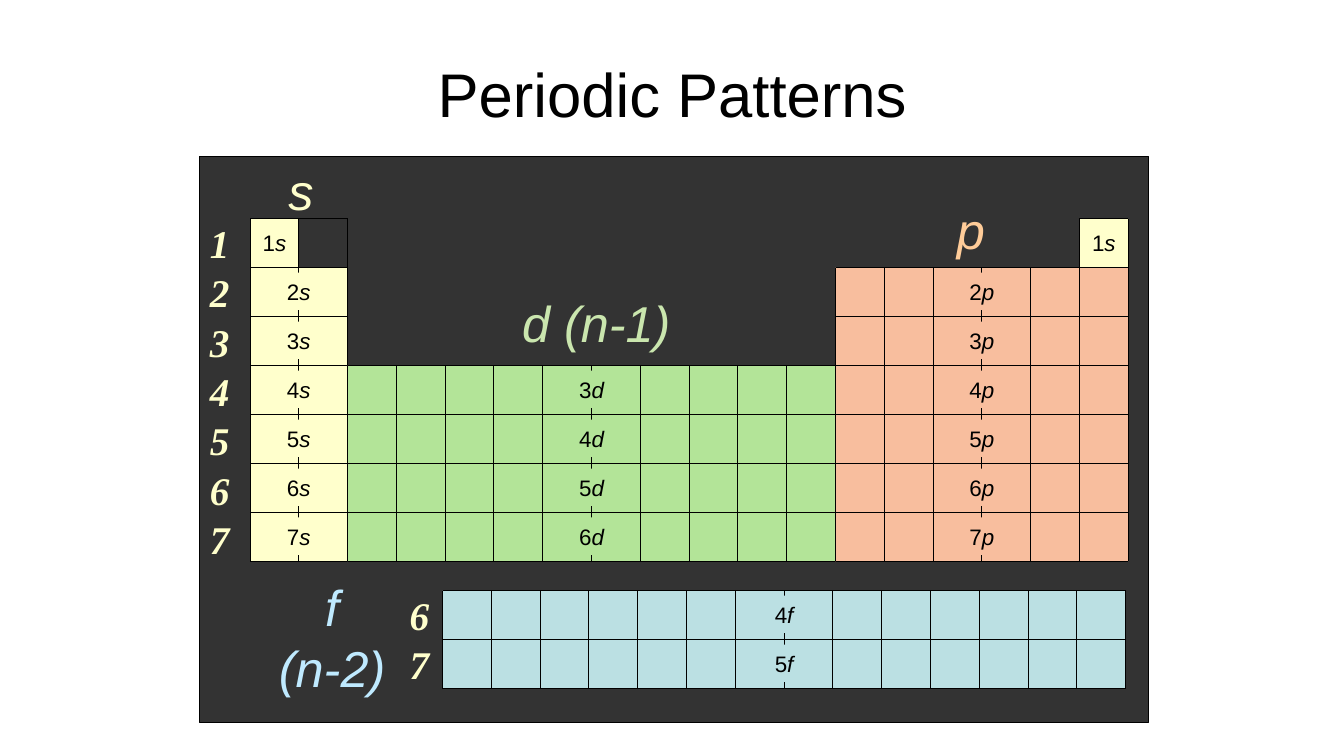
"""Build a slide of the periodic table's s, p, d and f orbital blocks."""
from lxml import etree
from pptx import Presentation
from pptx.dml.color import RGBColor
from pptx.enum.shapes import MSO_CONNECTOR, MSO_SHAPE
from pptx.enum.text import MSO_ANCHOR, PP_ALIGN
from pptx.oxml.ns import qn
from pptx.util import Inches, Pt

RECTANGLE = MSO_SHAPE.RECTANGLE
STRAIGHT = MSO_CONNECTOR.STRAIGHT
CENTER = PP_ALIGN.CENTER
MIDDLE = MSO_ANCHOR.MIDDLE
COLORS = {
    "black": "000000", "board": "333333",
    "s": "FFFFCC", "p": "F8BE9E", "d": "B3E498", "f": "BBE0E3",
    "p title": "FFCC99", "d title": "CAE6AE", "f title": "BFEAFF",
}
LEFT, TOP = 2.48, 2.17
COLUMN, ROW = 8.71 / 18, 3.4 / 7
F_LEFT, F_TOP = 4.39, 5.86
LABEL_WIDTH, LABEL_HEIGHT = 0.44, 0.37

presentation = Presentation()
presentation.slide_width = Inches(13.33)
presentation.slide_height = Inches(7.5)
slide = presentation.slides.add_slide(presentation.slide_layouts[6])


def add_box(bounds, lines=(), fill=None, color="black", size=16, spacing=1.0, **font):
    """Add a filled rectangle or a text box; lines hold (text, italic) runs."""
    bounds = [Inches(value) for value in bounds]
    if fill:
        shape = slide.shapes.add_shape(RECTANGLE, *bounds)
        shape.shadow.inherit = False
        shape.fill.solid()
        shape.fill.fore_color.rgb = RGBColor.from_string(COLORS[fill])
        shape.line.fill.background()
    else:
        shape = slide.shapes.add_textbox(*bounds)
    frame = shape.text_frame
    frame.word_wrap = False
    frame.vertical_anchor = MIDDLE
    for index, runs in enumerate(lines):
        paragraph = frame.add_paragraph() if index else frame.paragraphs[0]
        paragraph.alignment = CENTER
        paragraph.line_spacing = spacing
        for text, italic in runs:
            run = paragraph.add_run()
            run.text = text
            run.font.color.rgb = RGBColor.from_string(COLORS[color])
            formats = {"name": "Arial", "size": Pt(size), "italic": italic, **font}
            for name, value in formats.items():
                setattr(run.font, name, value)
    return shape


def add_line(*ends):
    """Add a thin black line between two points."""
    connector = slide.shapes.add_connector(STRAIGHT, *[Inches(value) for value in ends])
    connector.line.color.rgb = RGBColor.from_string(COLORS["black"])
    connector.line.width = Pt(0.75)
    etree.SubElement(connector._element.spPr, qn("a:effectLst"))


board = add_box((1.98, 1.55, 9.41, 5.62), fill="board")
board.line.color.rgb = RGBColor.from_string(COLORS["black"])
board.line.width = Pt(0.75)

add_box((0.67, 0.3, 12, 1.25), [[("Periodic Patterns", False)]], size=44)

block_titles = [
    ("s", "s", (2.76, 1.54, 0.45, 0.7)),
    ("p", "p title", (9.39, 1.93, 0.48, 0.7)),
    ("d (n-1)", "d title", (5.08, 2.85, 1.67, 0.7)),
    ("f (n-2)", "f title", (2.53, 5.97, 1.53, 0.7)),
]
for text, color, bounds in block_titles:
    add_box(bounds, [[(text, True)]], color=color, size=36)

period_numbers = [("1234567", (1.98, 2.1, 0.4, 3.53)), ("67", (3.96, 5.79, 0.4, 1.08))]
for periods, bounds in period_numbers:
    add_box(bounds, [[(period, True)] for period in periods], color="s", size=28,
            spacing=1.05, name="Times New Roman", bold=True)

blocks = [
    (LEFT, TOP, 1, 1, "s", 1),
    (LEFT + COLUMN, TOP, 1, 1, "board", None),
    (LEFT, TOP + ROW, 2, 6, "s", 2),
    (LEFT + 2 * COLUMN, TOP + 3 * ROW, 10, 4, "d", 3),
    (LEFT + 12 * COLUMN, TOP + ROW, 6, 6, "p", 2),
    (LEFT + 17 * COLUMN, TOP, 1, 1, "s", 1),
    (F_LEFT, F_TOP, 14, 2, "f", 4),
]
for left, top, columns, rows, block, first_shell in blocks:
    width, height = columns * COLUMN, rows * ROW
    add_box((left, top, width, height), fill=block)
    for column in range(columns + 1):
        x = left + column * COLUMN
        add_line(x, top, x, top + height)
    for row in range(rows + 1):
        y = top + row * ROW
        add_line(left, y, left + width, y)
    if first_shell:
        label_left = left + (width - LABEL_WIDTH) / 2
        for row in range(rows):
            label_top = top + row * ROW + 0.05
            add_box((label_left, label_top, LABEL_WIDTH, LABEL_HEIGHT),
                    [[(str(first_shell + row), False), (block, True)]], fill=block)

presentation.save("out.pptx")
